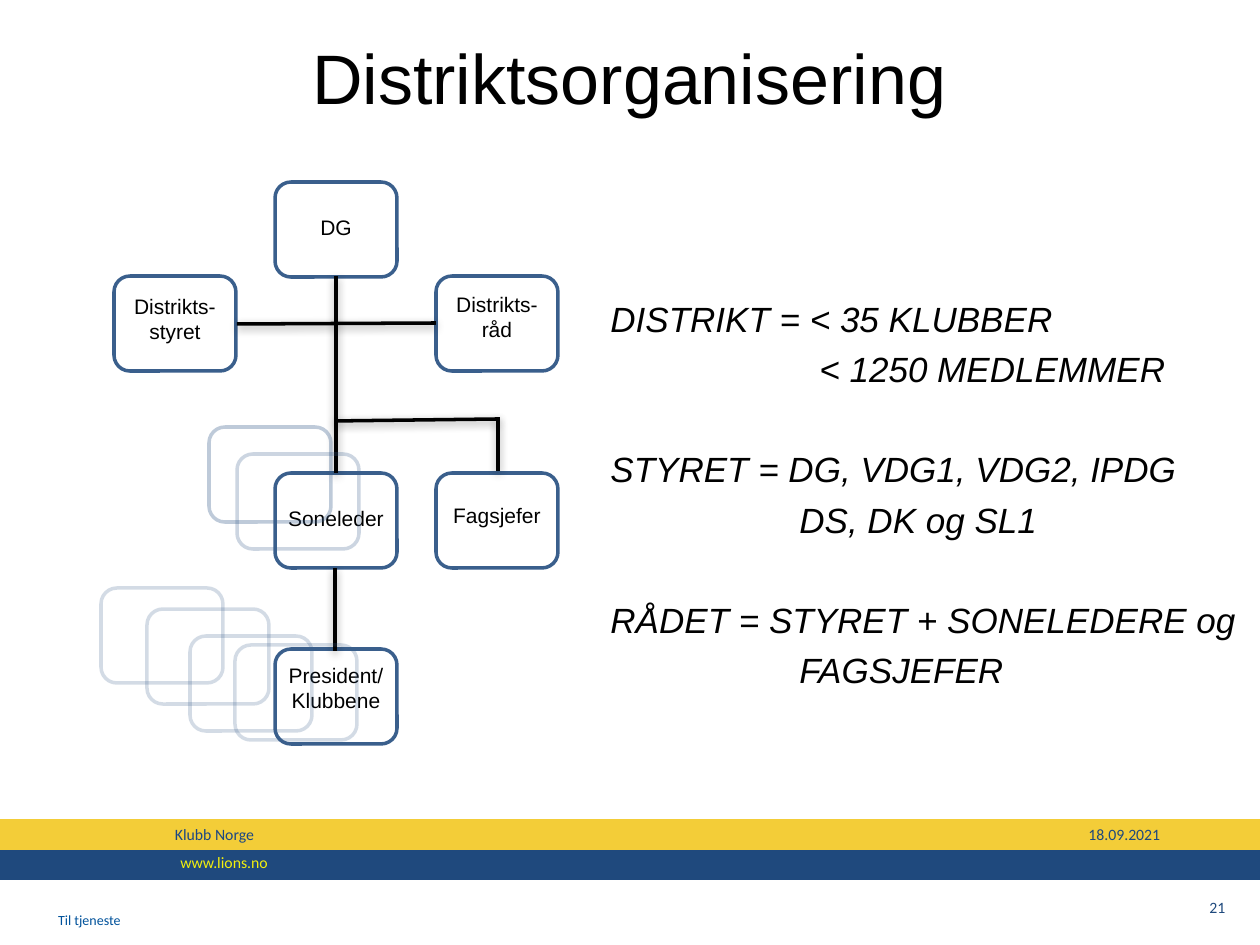
from dataclasses import dataclass

from lxml.etree import SubElement
from pptx import Presentation
from pptx.dml.color import RGBColor
from pptx.enum.shapes import MSO_CONNECTOR, MSO_SHAPE
from pptx.enum.text import MSO_ANCHOR, PP_ALIGN
from pptx.oxml import parse_xml
from pptx.oxml.ns import nsdecls, qn
from pptx.util import Pt

SCALE = 914400 / 126  # EMU per px


def px(n):
    return round(n * SCALE)


def rgb(code):
    return RGBColor.from_string(code)


@dataclass(frozen=True)
class Theme:
    ink: str = "000000"
    edge: str = "3A5F8C"
    gold: str = "F3CD38"
    navy: str = "1F497D"
    blue: str = "00529B"
    steel: str = "1B4784"
    lemon: str = "F2EF0D"
    main: str = "Arial"
    foot: str = "Calibri"
    head: int = 40
    body: int = 20
    label: int = 12
    small: int = 9
    tiny: int = 8
    rule: int = 2


class Page:
    def __init__(self, slide, theme):
        self.slide, self.theme = slide, theme
        self.shapes = slide.shapes

    def style(self, para, size, color, face=None, align=None, slant=None):
        para.alignment = align
        font = para.font
        font.name, font.size = face or self.theme.main, Pt(size)
        font.color.rgb, font.italic = rgb(color), slant

    def title(self, text, *box):
        shape = self.shapes.title
        shape.left, shape.top, shape.width, shape.height = map(px, box)
        shape.text_frame.text = text
        shape.text_frame.vertical_anchor = MSO_ANCHOR.TOP
        self.style(shape.text_frame.paragraphs[0], self.theme.head,
                   self.theme.ink, align=PP_ALIGN.CENTER)

    def shape(self, kind, *box):
        shape = self.shapes.add_shape(kind, *map(px, box))
        shape.shadow.inherit = False
        return shape

    def band(self, top, high, color):
        band = self.shape(MSO_SHAPE.RECTANGLE, 0, top, 1260, high)
        band.fill.solid()
        band.fill.fore_color.rgb = rgb(color)
        band.line.fill.background()

    def frame(self, left, top, *size):
        box = self.shapes.add_textbox(*map(px, (left, top, *size)))
        box.text_frame.word_wrap = True
        return box.text_frame

    def note(self, text, box, size, color, align=PP_ALIGN.LEFT):
        frame = self.frame(*box)
        frame.text = text
        self.style(frame.paragraphs[0], size, color, self.theme.foot, align)

    def card(self, left, top, alpha=100):
        card = self.shape(MSO_SHAPE.ROUNDED_RECTANGLE, left, top, 122, 95)
        card.fill.background()
        card.line.width = Pt(self.theme.rule)
        card.line.color.rgb = rgb(self.theme.edge)
        if alpha < 100:
            tint = card.line._get_or_add_ln().find(".//" + qn("a:srgbClr"))
            SubElement(tint, qn("a:alpha"), val=str(alpha * 1000))
        return card

    def node(self, left, top, drop, *lines):
        frame = self.card(left, top).text_frame
        frame.word_wrap = True
        frame.vertical_anchor = MSO_ANCHOR.TOP
        frame.margin_left = frame.margin_right = px(4)
        frame.margin_top, frame.margin_bottom = px(drop), 0
        frame.text = "\n".join(lines)
        for para in frame.paragraphs:
            self.style(para, self.theme.label, self.theme.ink,
                       align=PP_ALIGN.CENTER)

    def line(self, *ends):
        line = self.shapes.add_connector(MSO_CONNECTOR.STRAIGHT,
                                         *map(px, ends))
        line.line.width = Pt(self.theme.rule)
        line.line.color.rgb = rgb(self.theme.ink)
        line._element.spPr.append(parse_xml(
            f'<a:effectLst {nsdecls("a")}><a:outerShdw blurRad="63500" '
            'dist="20000" dir="5400000" rotWithShape="0">'
            f'<a:srgbClr val="{self.theme.ink}"><a:alpha val="38000"/>'
            '</a:srgbClr></a:outerShdw></a:effectLst>'))

    def facts(self, rows, *box):
        frame = self.frame(*box)
        for i, (text, indent, gap) in enumerate(rows):
            para = frame.add_paragraph() if i else frame.paragraphs[0]
            para.text = text
            para._p.get_or_add_pPr().set("marL", str(px(indent)))
            para.space_before = Pt(gap)
            self.style(para, self.theme.body, self.theme.ink, slant=True)


def main():
    deck = Presentation()
    deck.slide_width, deck.slide_height = px(1260), px(945)
    look = Theme()
    page = Page(deck.slides.add_slide(deck.slide_layouts[5]), look)

    # Footer
    page.band(819, 31, look.gold)
    page.band(850, 30, look.navy)
    page.note("Til tjeneste", (0, 905, 179, 30), look.tiny, look.blue,
              PP_ALIGN.CENTER)
    page.note("Klubb Norge", (151, 819, 127, 28), look.small, look.steel,
              PP_ALIGN.CENTER)
    page.note("www.lions.no", (168, 847, 315, 31), look.small, look.lemon)
    page.note("21", (1197, 892, 53, 42), look.small, look.navy)
    page.note("18.09.2021", (1076, 819, 118, 28), look.small, look.navy)

    # Title and facts
    page.title("Distriktsorganisering", 62, 28, 1134, 117)
    page.facts([
        ("DISTRIKT = < 35 KLUBBER", 15, 0),
        ("< 1250 MEDLEMMER", 224, 5),
        ("STYRET = DG, VDG1, VDG2, IPDG", 15, 33),
        ("DS, DK og SL1", 204, 5),
        ("RÅDET = STYRET + SONELEDERE og", 15, 33),
        ("FAGSJEFER", 204, 5),
    ], 583, 291, 677, 650)

    # Chart nodes: left, mid and right columns
    left, mid, right = 114, 275, 436
    page.node(mid, 182, 28, "DG")
    page.node(left, 276, 13, "Distrikts-", "styret")
    page.node(right, 276, 11, "Distrikts-råd")
    page.node(mid, 473, 28, "Soneleder")
    page.node(right, 473, 25, "Fagsjefer")
    page.node(mid, 649, 9, "President/ Klubbene")

    # Links
    for ends in [(336, 276, 336, 473), (436, 323, 237, 324),
                 (335, 568, 335, 651), (498, 471, 498, 417),
                 (498, 419, 335, 421)]:
        page.line(*ends)

    # Faded cards behind zone leaders and clubs
    for x, y, alpha in [(237, 454, 25), (209, 427, 32), (147, 609, 22),
                        (101, 588, 22), (190, 636, 22), (235, 645, 22)]:
        page.card(x, y, alpha)

    deck.save("out.pptx")


if __name__ == "__main__":
    main()
